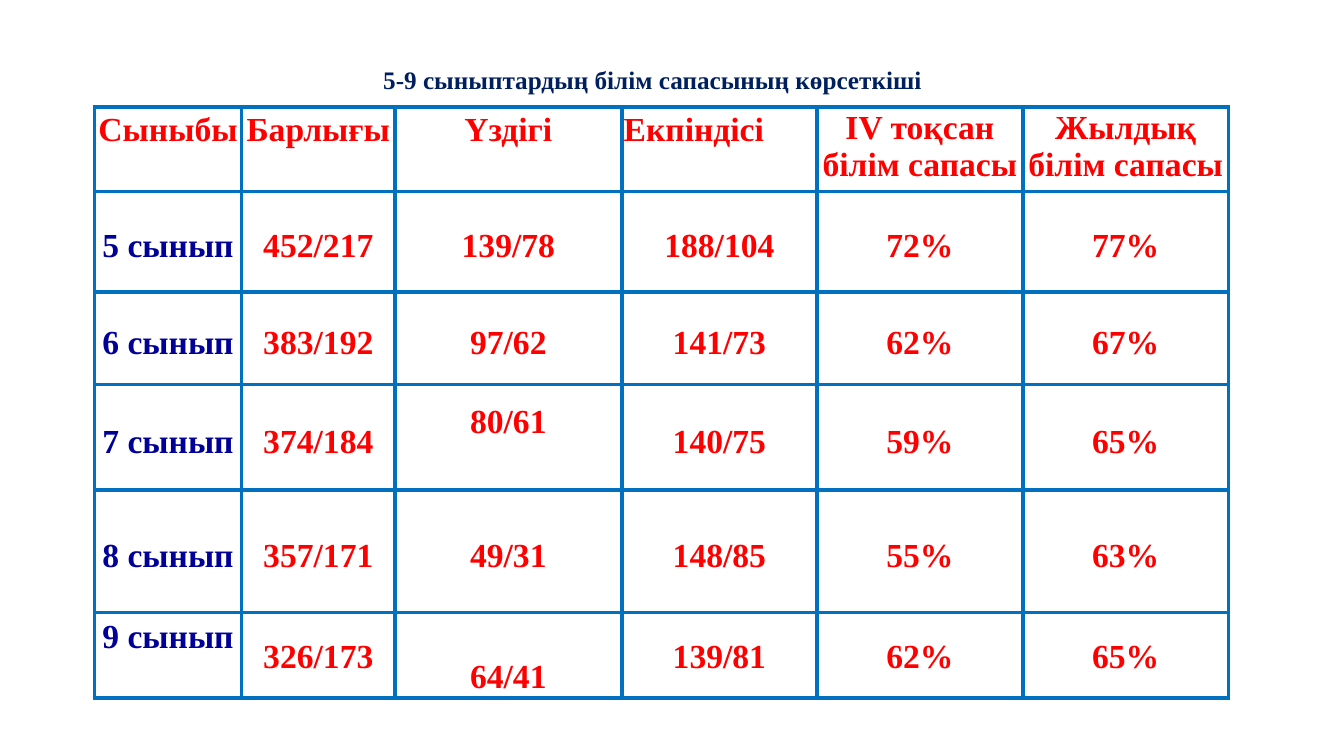
"""Build a slide with a table of learning quality for grades 5 to 9."""
from lxml.etree import SubElement
from pptx import Presentation
from pptx.dml.color import RGBColor
from pptx.enum.text import MSO_ANCHOR, MSO_AUTO_SIZE, PP_ALIGN as Align
from pptx.oxml.ns import qn
from pptx.util import Pt

RED, NAVY, TITLE_BLUE, BORDER_BLUE = "FF0000", "000099", "001F5F", "0070BF"


def write_text(frame, text, size=24, color=RED, align=Align.CENTER, left=0, top=0):
    frame.word_wrap = True
    frame.margin_left, frame.margin_top = Pt(left), Pt(top)
    frame.margin_right = frame.margin_bottom = 0
    frame.vertical_anchor = MSO_ANCHOR.TOP
    paragraph = frame.paragraphs[0]
    paragraph.alignment = align
    paragraph.line_spacing = 1.0
    paragraph.space_before = Pt(0)
    run = paragraph.add_run()
    run.text = text
    run.font.name = "Times New Roman"
    run.font.size = Pt(size)
    run.font.bold = True
    run.font.color.rgb = RGBColor.from_string(color)


def draw_borders(cell, color, width):
    properties = cell._tc.get_or_add_tcPr()
    for position, side in enumerate(("a:lnL", "a:lnR", "a:lnT", "a:lnB")):
        line = SubElement(properties, qn(side), w=str(Pt(width)))
        fill = SubElement(line, qn("a:solidFill"))
        SubElement(fill, qn("a:srgbClr"), val=color)
        properties.insert(position, line)


presentation = Presentation()
presentation.slide_width, presentation.slide_height = Pt(960), Pt(540)
slide = presentation.slides.add_slide(presentation.slide_layouts[5])

title = slide.shapes.title
title.left, title.top, title.width, title.height = Pt(273), Pt(45.4), Pt(388), Pt(23.8)
write_text(title.text_frame, "5-9 сыныптардың білім сапасының көрсеткіші",
           size=18, color=TITLE_BLUE, align=Align.LEFT, left=0.7, top=0.7)
title.text_frame.auto_size = MSO_AUTO_SIZE.NONE

rows = [
    ["Сыныбы", "Барлығы", "Үздігі", "Екпіндісі", "IV тоқсан білім сапасы", "Жылдық білім сапасы"],
    ["5 сынып", "452/217", "139/78", "188/104", "72%", "77%"],
    ["6 сынып", "383/192", "97/62", "141/73", "62%", "67%"],
    ["7 сынып", "374/184", "80/61", "140/75", "59%", "65%"],
    ["8 сынып", "357/171", "49/31", "148/85", "55%", "63%"],
    ["9 сынып", "326/173", "64/41", "139/81", "62%", "65%"],
]
column_widths = [105.2, 109.5, 162, 139.5, 147, 147]
row_heights = [60.3, 72, 66, 75.6, 87.2, 61.2]
row_tops = [3, 25.7, 22.9, 27.6, 33.4, 19]
special_tops = {(0, 4): 2, (0, 5): 2, (3, 2): 13.4, (5, 0): 4.5, (5, 2): 33}

table = slide.shapes.add_table(len(rows), len(column_widths), Pt(67.4), Pt(76.4),
                               Pt(sum(column_widths)), Pt(sum(row_heights))).table
table.first_row = table.horz_banding = False
for column, width in zip(table.columns, column_widths):
    column.width = Pt(width)
for row, height in zip(table.rows, row_heights):
    row.height = Pt(height)

for row_index, values in enumerate(rows):
    for column_index, value in enumerate(values):
        cell = table.cell(row_index, column_index)
        cell.margin_left = cell.margin_right = cell.margin_bottom = 0
        cell.margin_top = Pt(special_tops.get((row_index, column_index), row_tops[row_index]))
        cell.vertical_anchor = MSO_ANCHOR.TOP
        cell.fill.background()
        draw_borders(cell, BORDER_BLUE, 3)
        write_text(cell.text_frame, value,
                   color=NAVY if row_index and column_index == 0 else RED,
                   align=Align.LEFT if value == "Екпіндісі" else Align.CENTER)
        if value == "Екпіндісі":
            cell.margin_left = Pt(1.4)

presentation.save("out.pptx")
